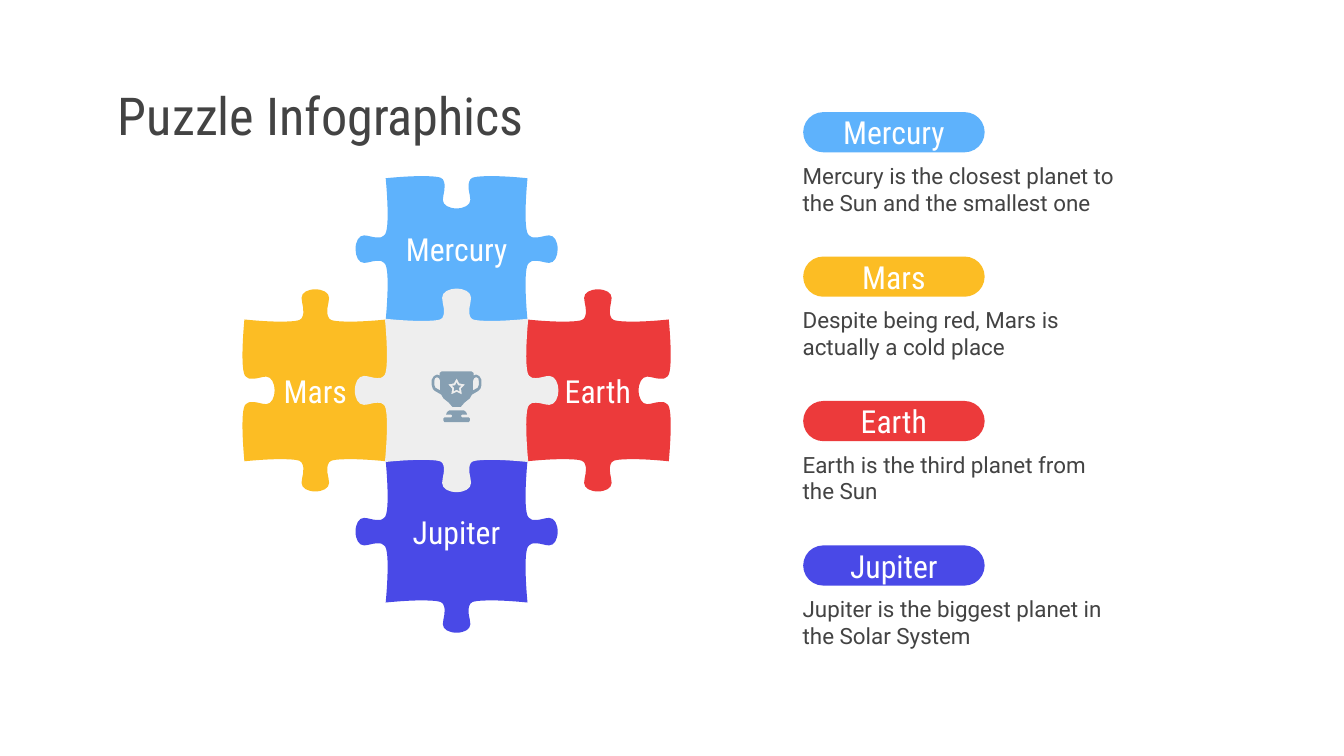
"""Build the puzzle infographics slide with four planets."""
from math import cos, pi, sin

from lxml.etree import SubElement
from pptx import Presentation
from pptx.dml.color import RGBColor
from pptx.enum.shapes import MSO_SHAPE as Shape
from pptx.enum.text import MSO_ANCHOR as Anchor, PP_ALIGN as Align
from pptx.oxml.ns import qn
from pptx.util import Cm, Pt

COLORS = {
    "blue": "5EB2FC", "yellow": "FCBD24", "red": "EC3A3B", "indigo": "4949E7",
    "pale": "EEEEEE", "steel": "869FB2", "text": "434343", "white": "FFFFFF",
}
TITLE = "Puzzle Infographics"
HEADING, BODY = "Roboto Condensed", "Roboto"

# name, color, grid column and row, knobs on top, right, bottom, left, description
PLANETS = [
    ("Mercury", "blue", (0, -1), (-1, 1, -1, 1),
     "Mercury is the closest planet to the Sun and the smallest one"),
    ("Mars", "yellow", (-1, 0), (1, -1, 1, -1),
     "Despite being red, Mars is actually a cold place"),
    ("Earth", "red", (1, 0), (1, -1, 1, -1),
     "Earth is the third planet from the Sun"),
    ("Jupiter", "indigo", (0, 1), (-1, 1, 1, 1),
     "Jupiter is the biggest planet in the Solar System"),
]

CENTER_X, CENTER_Y, PITCH, HALF = 8.63, 7.38, 2.67, 1.34
LEGEND_TOP, LEGEND_STEP = 2.12, 2.73

FLAT_EDGE = [
    (0, 0.57), (0.14, 0.57), (0.26, 0.51), (0.26, 0.41),
    (0.26, 0.3), (0.18, 0.15), (0.26, 0.02),
    (0.28, -0.03), (0.46, -0.04), (0.67, -0.04),
    (0.97, -0.04), (HALF, 0), (HALF, 0),
]
SIDE_EDGE = [
    (0, 0.57), (0.14, 0.57), (0.26, 0.51), (0.26, 0.41),
    (0.26, 0.33), (0.22, 0.25), (0.22, 0.16),
    (0.22, 0.1), (0.22, 0.06), (0.26, 0.03),
    (0.33, -0.1), (HALF, 0), (HALF, 0),
]

CUP_HALF = [
    (0, -0.36), (0.28, -0.36), (0.32, -0.33), (0.32, -0.28), (0.37, -0.3),
    (0.43, -0.27), (0.47, -0.2), (0.47, -0.1), (0.45, -0.03), (0.41, 0.01),
    (0.29, 0.08), (0.25, 0.15), (0.15, 0.23), (0.08, 0.31), (0, 0.31),
]
HANDLE_HOLE = [
    (0.31, -0.18), (0.33, -0.23), (0.37, -0.25), (0.41, -0.23),
    (0.42, -0.18), (0.42, -0.1), (0.4, -0.05), (0.31, 0),
]
BASE_HALF = [
    (0, 0.38), (0.14, 0.38), (0.18, 0.41), (0.2, 0.46), (0.1, 0.46), (0.08, 0.48),
    (0.1, 0.51), (0.23, 0.51), (0.25, 0.53), (0.25, 0.57), (0.23, 0.6), (0, 0.6),
]


def color(name):
    return RGBColor.from_string(COLORS[name])


def mirror(points):
    return [(-x, y) for x, y in reversed(points)]


def star(radius):
    radii = (radius, radius * 0.52)
    return [(radii[i % 2] * sin(i * pi / 5), -0.06 - radii[i % 2] * cos(i * pi / 5))
            for i in range(10)]


def puzzle_outline(knobs):
    outline = [(-HALF, -HALF)]
    for turn, knob in enumerate(knobs):
        half = SIDE_EDGE if turn % 2 else FLAT_EDGE
        edge = [(x, -HALF - knob * y) for x, y in mirror(half) + half[1:]]
        for _ in range(turn):
            edge = [(-y, x) for x, y in edge]
        outline += edge[1:]
    return outline


def paint(shape, fill):
    shape.shadow.inherit = False
    shape.fill.solid()
    shape.fill.fore_color.rgb = color(fill)
    shape.line.fill.background()
    return shape


def add_outline(page, contours, fill, x=CENTER_X, y=CENTER_Y):
    placed = [[(Cm(x + dx), Cm(y + dy)) for dx, dy in points] for points in contours]
    builder = page.shapes.build_freeform(*placed[0][0])
    for index, points in enumerate(placed):
        if index:
            builder.move_to(*points[0])
        builder.add_line_segments(points[1:], close=True)
    return paint(builder.convert_to_shape(), fill)


def add_piece(page, knobs, fill, x=CENTER_X, y=CENTER_Y):
    """Draw a puzzle piece, joining each three points into one Bezier curve."""
    piece = add_outline(page, [puzzle_outline(knobs)], fill, x, y)
    lines = list(piece.element.iter(qn("a:lnTo")))
    for first in range(0, len(lines), 3):
        bend = SubElement(lines[first].getparent(), qn("a:cubicBezTo"))
        lines[first].addprevious(bend)
        for line in lines[first:first + 3]:
            bend.append(line[0])
            line.getparent().remove(line)
    return piece


def write(shape, text, size, font, ink, align=Align.LEFT, anchor=Anchor.MIDDLE):
    frame = shape.text_frame
    frame.word_wrap = True
    frame.vertical_anchor = anchor
    frame.margin_left = frame.margin_right = Cm(0.25)
    frame.margin_top = frame.margin_bottom = Cm(0.25)
    para = frame.paragraphs[0]
    para.text, para.alignment = text, align
    para.font.size, para.font.name = Pt(size), font
    para.font.color.rgb = color(ink)


def add_text(page, left, top, width, height, *style):
    box = page.shapes.add_textbox(Cm(left), Cm(top), Cm(width), Cm(height))
    write(box, *style)


def add_planet(page, name, fill, cell, knobs):
    x, y = CENTER_X + cell[0] * PITCH, CENTER_Y + cell[1] * PITCH
    add_piece(page, knobs, fill, x, y)
    add_text(page, x - 1.95, y - 0.6, 3.9, 1.2, name, 17, HEADING, "white", Align.CENTER)


def add_trophy(page):
    piece = add_piece(page, (1, 1, 1, 1), "pale")
    piece.line.color.rgb = color("pale")
    piece.line.width = Pt(0.75)
    cup = CUP_HALF + mirror(CUP_HALF)[1:-1]
    base = BASE_HALF + mirror(BASE_HALF)[1:-1]
    add_outline(page, [cup, HANDLE_HOLE, mirror(HANDLE_HOLE), star(0.17)], "steel")
    add_outline(page, [base], "steel")
    add_outline(page, [star(0.09)], "steel")


def add_legend(page, row, name, fill, description):
    top = LEGEND_TOP + row * LEGEND_STEP
    add_text(page, 14.92, top + 0.69, 6.48, 1.47,
             description, 12, BODY, "text", Align.LEFT, Anchor.TOP)
    pill = page.shapes.add_shape(Shape.ROUNDED_RECTANGLE,
                                 Cm(15.18), Cm(top), Cm(3.43), Cm(0.76))
    pill.adjustments[0] = 0.5
    write(paint(pill, fill), name, 17, HEADING, "white", Align.CENTER)


def main():
    deck = Presentation()
    deck.slide_width, deck.slide_height = Cm(25.4), Cm(14.29)
    page = deck.slides.add_slide(deck.slide_layouts[6])
    add_text(page, 1.98, 1.5, 21.46, 1.35, TITLE, 28, HEADING, "text")
    for name, fill, cell, knobs, _ in PLANETS:
        add_planet(page, name, fill, cell, knobs)
    add_trophy(page)
    for row, (name, fill, _, _, description) in enumerate(PLANETS):
        add_legend(page, row, name, fill, description)
    deck.save("out.pptx")


if __name__ == "__main__":
    main()
